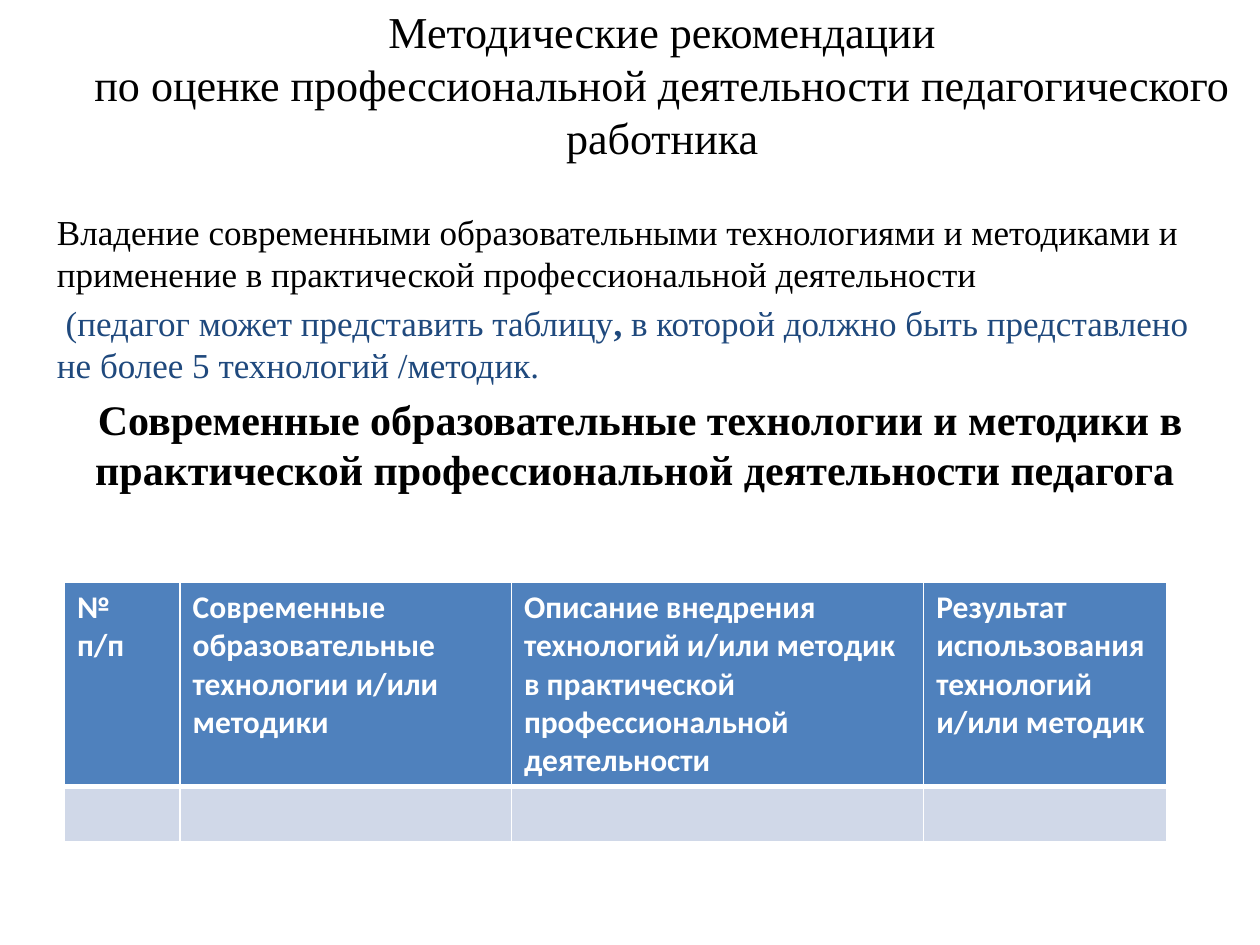
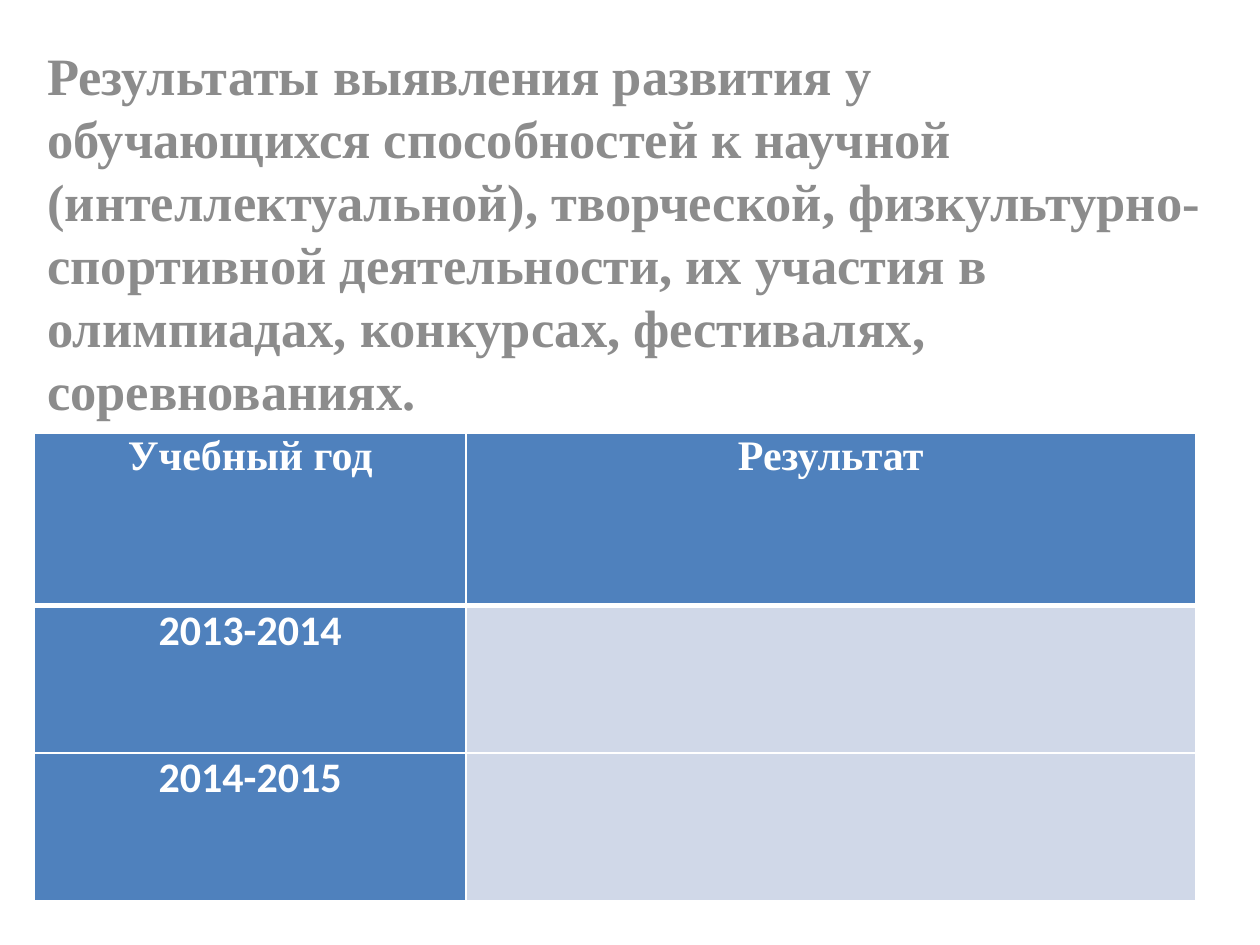
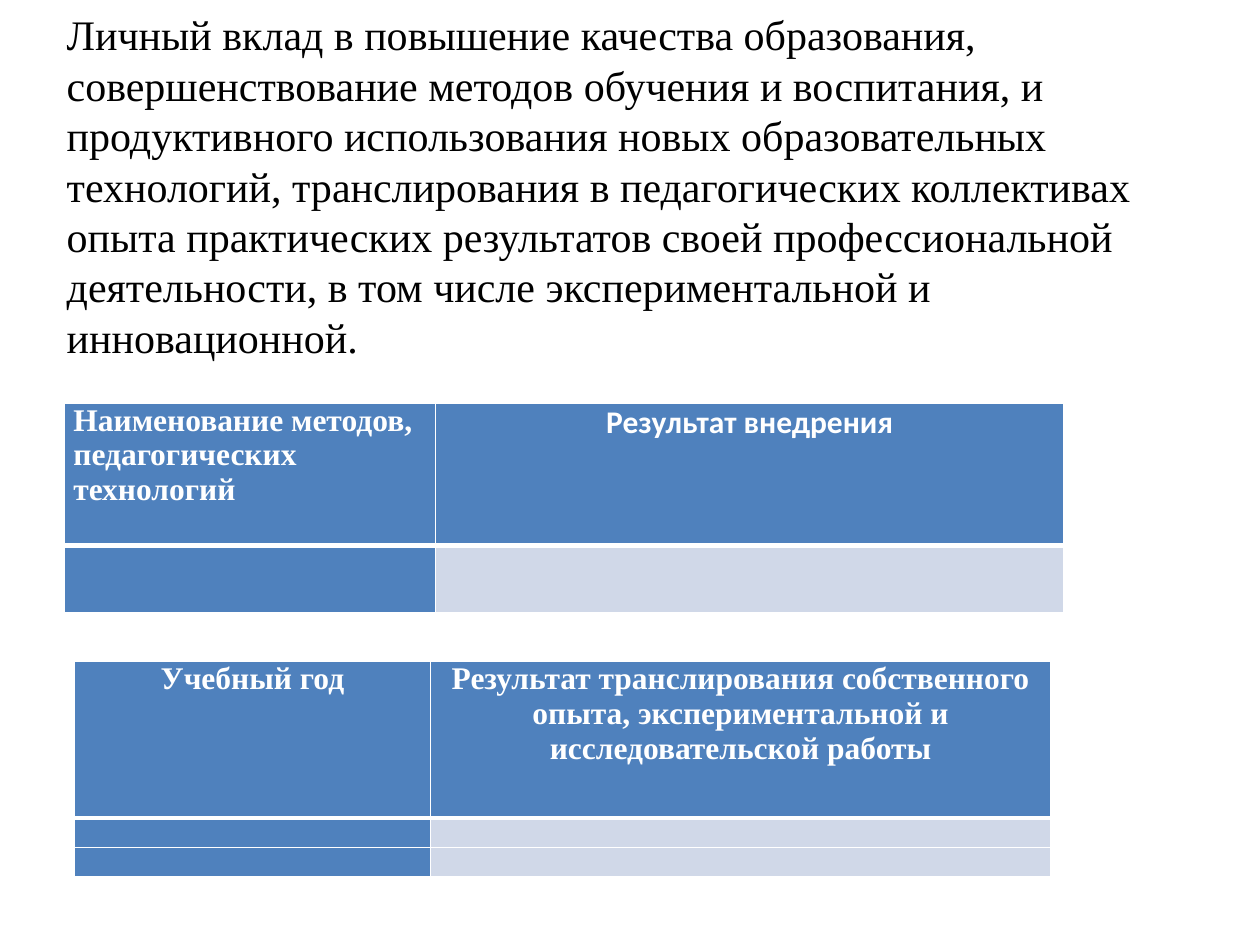
from lxml.etree import SubElement
from pptx import Presentation
from pptx.dml.color import RGBColor as Rgb
from pptx.enum.text import MSO_ANCHOR as Anchor, MSO_AUTO_SIZE as AutoSize, PP_ALIGN as Align
from pptx.oxml.ns import qn
from pptx.util import Cm, Pt

COLORS = {
    "black": "000000",
    "navy": "1F497D",
    "gray": "8C8C8C",
    "white": "FFFFFF",
    "header": "4F81BD",
    "body": "D0D8E8",
}
SERIF = "Times New Roman"
SANS = "Calibri"
TITLE_ONLY = 5


def write_text(paragraph, text, font=SERIF, size=24, color="black", bold=False,
               align=Align.LEFT, leading=1.2, before=0):
    paragraph.alignment = align
    paragraph.space_before = Pt(before)
    if leading:
        paragraph.line_spacing = Pt(round(size * leading, 1))
    runs = [(text, bold)] if isinstance(text, str) else text
    for words, is_bold in runs:
        run = paragraph.add_run()
        run.text = words
        run.font.name = font
        run.font.size = Pt(size)
        run.font.bold = is_bold
        run.font.color.rgb = Rgb.from_string(COLORS[color])


def write_paragraphs(frame, texts, **style):
    for index, text in enumerate(texts):
        paragraph = frame.add_paragraph() if index else frame.paragraphs[0]
        write_text(paragraph, text, **style)


def prepare_frame(frame):
    frame.word_wrap = True
    frame.auto_size = AutoSize.NONE
    frame.vertical_anchor = Anchor.TOP


def add_titled_slide(presentation, place, texts, margin_top=0, **style):
    slide = presentation.slides.add_slide(presentation.slide_layouts[TITLE_ONLY])
    title = slide.shapes.title
    title.left, title.top, title.width, title.height = map(Cm, place)
    prepare_frame(title.text_frame)
    title.text_frame.margin_top = Cm(margin_top)
    write_paragraphs(title.text_frame, texts, **style)
    return slide


def add_description(slide, place):
    frame = slide.shapes.add_textbox(*map(Cm, place)).text_frame
    prepare_frame(frame)
    write_text(
        frame.paragraphs[0],
        "Владение современными образовательными технологиями и методиками и "
        "применение в практической профессиональной деятельности",
        size=20,
    )
    write_text(
        frame.add_paragraph(),
        [
            (" (педагог может представить таблицу", False),
            (", ", True),
            ("в которой должно быть представлено не более 5 технологий /методик.", False),
        ],
        size=20, color="navy", before=4,
    )
    write_text(
        frame.add_paragraph(),
        " Современные образовательные технологии и методики в практической "
        "профессиональной деятельности педагога",
        bold=True, align=Align.CENTER, before=4.8,
    )


def set_borders(cell, top, bottom):
    properties = cell._tc.get_or_add_tcPr()
    for side, width in (("L", 1), ("R", 1), ("T", top), ("B", bottom)):
        line = SubElement(properties, qn(f"a:ln{side}"), w=str(Pt(width)))
        fill = SubElement(line, qn("a:solidFill"))
        SubElement(fill, qn("a:srgbClr"), val=COLORS["white"])


def add_grid(slide, left, top, columns, rows, texts, first_column=True, tight=True):
    table = slide.shapes.add_table(
        len(rows), len(columns), Cm(left), Cm(top), Cm(sum(columns)), Cm(sum(rows))
    ).table
    table.first_col = first_column
    for column, width in zip(table.columns, columns):
        column.width = Cm(width)
    for row, height in zip(table.rows, rows):
        row.height = Cm(height)
    for row_index in range(len(rows)):
        for column_index in range(len(columns)):
            cell = table.cell(row_index, column_index)
            set_borders(cell, 3 if row_index == 1 else 1, 1 if row_index else 3)
            is_header = row_index == 0 or (first_column and column_index == 0)
            cell.fill.solid()
            cell.fill.fore_color.rgb = Rgb.from_string(COLORS["header" if is_header else "body"])
            if tight:
                cell.margin_left = cell.margin_right = Cm(0.18)
                cell.margin_top = cell.margin_bottom = 0
            if (row_index, column_index) in texts:
                paragraphs, style = texts[row_index, column_index]
                write_paragraphs(cell.text_frame, paragraphs, color="white", bold=True, **style)
            else:
                SubElement(cell.text_frame.paragraphs[0]._p, qn("a:endParaRPr"), sz="1000")


def serif_style(size, align=Align.CENTER):
    return {"size": size, "align": align, "leading": 1.1}


def sans_style(size, align=Align.CENTER):
    return {"font": SANS, "size": size, "align": align, "leading": None}


def build_technologies(presentation):
    slide = add_titled_slide(
        presentation, (1.3, 0.1, 24.1, 4.04),
        ["Методические рекомендации",
         "по оценке профессиональной деятельности педагогического работника"],
        size=25.2, align=Align.CENTER,
    )
    add_description(slide, (0.9, 4.11, 23.8, 7.4))
    headings = [
        ["№", "п/п"],
        ["Современные образовательные технологии и/или методики"],
        ["Описание внедрения",
         "технологий и/или методик в практической профессиональной деятельности"],
        ["Результат использования технологий и/или методик"],
    ]
    style = sans_style(18, Align.LEFT)
    texts = {(0, index): (heading, style) for index, heading in enumerate(headings)}
    add_grid(slide, 1.3, 11.73, [2.33, 6.68, 8.31, 4.9], [4.11, 1.11], texts,
             first_column=False, tight=False)


def build_student_results(presentation):
    slide = add_titled_slide(
        presentation, (0.7, 0.74, 23.8, 7.9),
        ["Результаты выявления развития у обучающихся способностей к научной "
         "(интеллектуальной), творческой, физкультурно-спортивной деятельности, их участия "
         "в олимпиадах, конкурсах, фестивалях, соревнованиях."],
        margin_top=0.13, size=30, color="gray", bold=True,
    )
    texts = {
        (0, 0): (["Учебный год"], serif_style(24)),
        (0, 1): (["Результат"], serif_style(24)),
        (1, 0): (["2013-2014"], sans_style(24)),
        (2, 0): (["2014-2015"], sans_style(24)),
    }
    add_grid(slide, 0.7, 8.74, [8.69, 14.71], [3.47, 2.97, 2.97], texts)


def build_contribution(presentation):
    slide = add_titled_slide(
        presentation, (1.09, 0.18, 23.8, 7.75),
        ["Личный вклад в повышение качества образования, совершенствование методов обучения "
         "и воспитания, и продуктивного использования новых образовательных технологий, "
         "транслирования в педагогических коллективах опыта практических результатов своей "
         "профессиональной деятельности, в том числе экспериментальной и инновационной."],
    )
    methods = {
        (0, 0): (["Наименование методов, педагогических технологий"],
                 serif_style(18, Align.LEFT)),
        (0, 1): (["Результат внедрения"], sans_style(18)),
    }
    add_grid(slide, 1.3, 8.13, [7.48, 12.67], [2.87, 1.35], methods)
    experience = {
        (0, 0): (["Учебный год"], serif_style(18)),
        (0, 1): (["Результат транслирования собственного опыта, экспериментальной и "
                  "исследовательской работы"], serif_style(18)),
    }
    add_grid(slide, 1.5, 13.34, [7.18, 12.5], [3.15, 0.59, 0.59], experience)


def main():
    presentation = Presentation()
    presentation.slide_width = Cm(25.4)
    presentation.slide_height = Cm(19.05)
    build_technologies(presentation)
    build_student_results(presentation)
    build_contribution(presentation)
    presentation.save("out.pptx")


if __name__ == "__main__":
    main()
